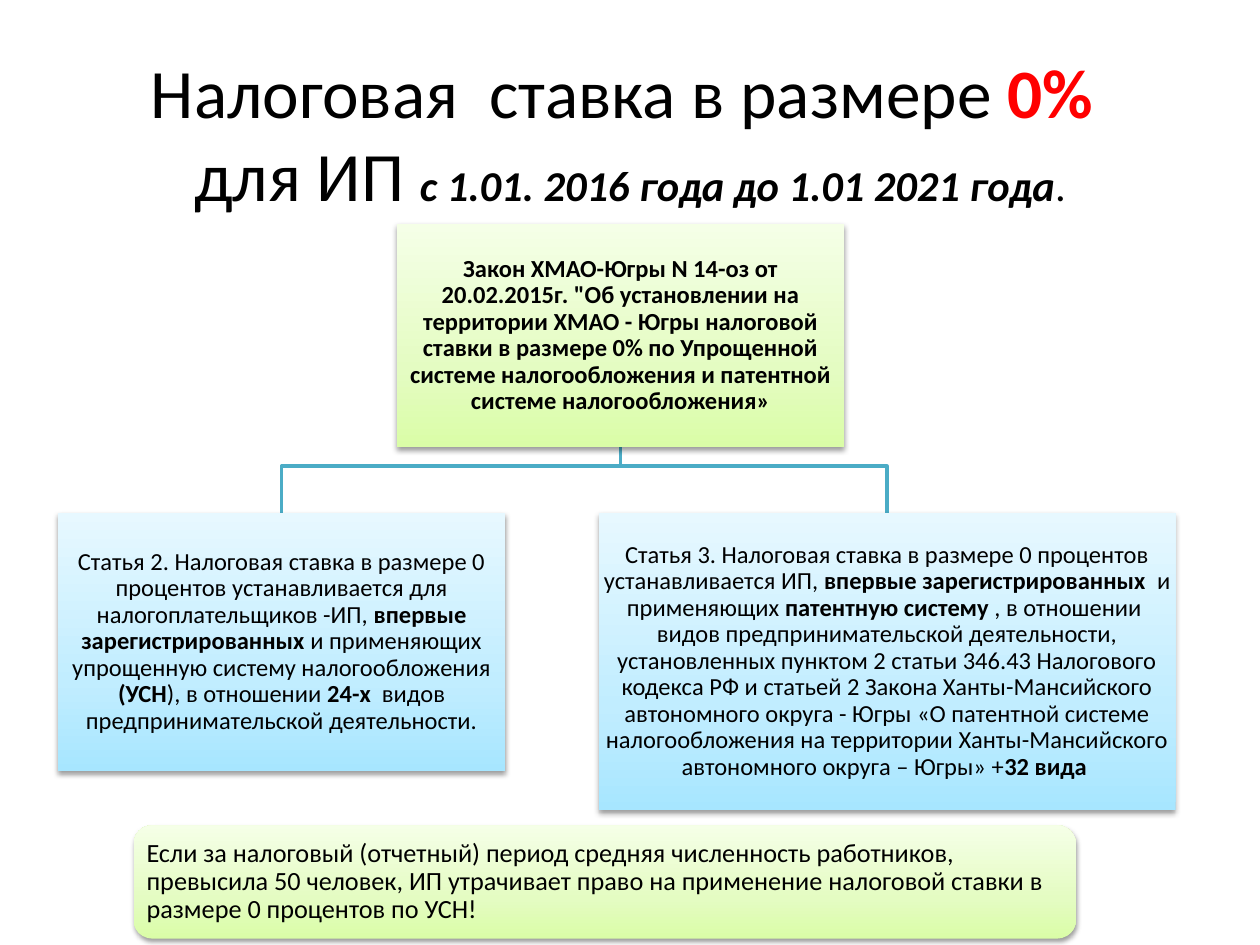
import pptx
import pptx.util
import pptx.oxml
import pptx.oxml.ns
import pptx.dml.color
import pptx.enum.shapes
import pptx.enum.text

FONT = "Calibri"
COLORS = {"text": "000000", "accent": "FF0000", "link": "4BACC6", "shadow": "000000"}
GRADIENTS = {
    "green": [(0, "DAFDA7"), (35, "E4FCC2"), (100, "F5FFE7")],
    "blue": [(0, "A7E6FF"), (35, "C1EDFF"), (100, "E7F8FF")],
}
TITLE_LINES = [
    [("Налоговая  ставка в размере ", 39.6, "", "text"), ("0% ", 39.6, "b", "accent")],
    [
        ("для ИП ", 39.6, "", "text"),
        ("с 1.01. 2016 года до 1.01 2021 года", 24.3, "bi", "text"),
        (".", 24.3, "", "text"),
    ],
]
LAW = [
    ('Закон ХМАО-Югры N 14-оз от 20.02.2015г. "Об установлении на территории '
     "ХМАО - Югры налоговой ставки в размере 0% по Упрощенной системе "
     "налогообложения и патентной системе налогообложения»", "b"),
]
ARTICLE_2 = [
    ("Статья 2. Налоговая ставка в размере 0 процентов устанавливается для "
     "налогоплательщиков -ИП, ", ""),
    ("впервые зарегистрированных ", "b"),
    ("и применяющих упрощенную систему налогообложения ", ""),
    ("(УСН", "b"),
    ("), в отношении ", ""),
    ("24-х", "b"),
    ("  видов предпринимательской деятельности.", ""),
]
ARTICLE_3 = [
    ("Статья 3. Налоговая ставка в размере 0 процентов устанавливается ИП, ", ""),
    ("впервые зарегистрированных  ", "b"),
    ("и применяющих ", ""),
    ("патентную систему ", "b"),
    (", в отношении  видов предпринимательской деятельности, установленных "
     "пунктом 2 статьи 346.43 Налогового кодекса РФ и статьей 2 Закона "
     "Ханты-Мансийского автономного округа - Югры «О патентной системе "
     "налогообложения на территории Ханты-Мансийского автономного округа – "
     "Югры» +", ""),
    ("32 вида ", "b"),
]
NOTE = [
    ("Если за налоговый (отчетный) период средняя численность работников, "
     "превысила 50 человек, ИП утрачивает право на применение налоговой ставки "
     "в размере 0 процентов по УСН!", ""),
]
ROOT_BOX = (3.15, 1.78, 3.55, 1.77)
CHILD_TOP = 4.07
CHILDREN = [
    ((0.46, CHILD_TOP, 3.55, 2.05), ARTICLE_2),
    ((4.75, CHILD_TOP, 4.58, 2.36), ARTICLE_3),
]
NOTE_BOX = (1.06, 6.55, 7.48, 0.9)
ELBOW_Y = 3.7


def inches(values):
    return [pptx.util.Inches(value) for value in values]


def rgb(name):
    return pptx.dml.color.RGBColor.from_string(COLORS[name])


def set_margins(frame, left, top, right, bottom):
    frame.margin_left, frame.margin_top, frame.margin_right, frame.margin_bottom = inches(
        (left, top, right, bottom))


def add_run(paragraph, text, style):
    run = paragraph.add_run()
    run.text = text
    run.font.bold = "b" in style
    run.font.italic = "i" in style
    return run


def drawing_element(xml):
    return pptx.oxml.parse_xml(xml.replace(">", " " + pptx.oxml.ns.nsdecls("a") + ">", 1))


def add_gradient(shape, stops):
    stop_xml = "".join(
        f'<a:gs pos="{position * 1000}"><a:srgbClr val="{color}"/></a:gs>'
        for position, color in stops)
    gradient = drawing_element(
        f'<a:gradFill><a:gsLst>{stop_xml}</a:gsLst>'
        '<a:lin ang="16200000" scaled="0"/></a:gradFill>')
    shape._element.spPr.find(pptx.oxml.ns.qn("a:prstGeom")).addnext(gradient)


def add_shadow(shape):
    shape.shadow.inherit = False
    blur, distance = pptx.util.Pt(3.1), pptx.util.Pt(1.6)
    shadow = drawing_element(
        f'<a:outerShdw blurRad="{blur}" dist="{distance}" dir="5400000" rotWithShape="0">'
        f'<a:srgbClr val="{COLORS["shadow"]}"><a:alpha val="38000"/></a:srgbClr></a:outerShdw>')
    shape._element.spPr.find(pptx.oxml.ns.qn("a:effectLst")).append(shadow)


def add_card(slide, kind, box, gradient, runs, size, margin, alignment):
    shape = slide.shapes.add_shape(kind, *inches(box))
    shape.line.fill.background()
    add_gradient(shape, GRADIENTS[gradient])
    add_shadow(shape)
    frame = shape.text_frame
    frame.word_wrap = True
    frame.vertical_anchor = pptx.enum.text.MSO_ANCHOR.MIDDLE
    set_margins(frame, *[margin] * 4)
    paragraph = frame.paragraphs[0]
    paragraph.alignment = alignment
    paragraph.line_spacing = 0.9
    paragraph.font.name = FONT
    paragraph.font.size = pptx.util.Pt(size)
    paragraph.font.color.rgb = rgb("text")
    for text, style in runs:
        add_run(paragraph, text, style)


def add_branch(slide, box):
    start_x = ROOT_BOX[0] + ROOT_BOX[2] / 2
    start_y = ROOT_BOX[1] + ROOT_BOX[3]
    end_x = box[0] + box[2] / 2
    corners = [(start_x, start_y), (start_x, ELBOW_Y), (end_x, ELBOW_Y), (end_x, CHILD_TOP)]
    start, *rest = [inches(corner) for corner in corners]
    builder = slide.shapes.build_freeform(*start)
    builder.add_line_segments(rest, close=False)
    branch = builder.convert_to_shape()
    branch.fill.background()
    branch.line.color.rgb = rgb("link")
    branch.line.width = pptx.util.Pt(2)
    branch.shadow.inherit = False


def fill_title(title):
    title.left, title.top, title.width, title.height = inches((0.5, 0.3, 9, 1.25))
    frame = title.text_frame
    frame.word_wrap = True
    frame.auto_size = pptx.enum.text.MSO_AUTO_SIZE.NONE
    frame.vertical_anchor = pptx.enum.text.MSO_ANCHOR.TOP
    set_margins(frame, 0.1, 0.09, 0.1, 0)
    paragraph = frame.paragraphs[0]
    paragraph.alignment = pptx.enum.text.PP_ALIGN.CENTER
    paragraph.font.name = FONT
    for index, line in enumerate(TITLE_LINES):
        if index:
            paragraph.add_line_break()
        for text, size, style, color in line:
            run = add_run(paragraph, text, style)
            run.font.size = pptx.util.Pt(size)
            run.font.color.rgb = rgb(color)


def main():
    presentation = pptx.Presentation()
    presentation.slide_width, presentation.slide_height = inches((10, 7.5))
    slide = presentation.slides.add_slide(presentation.slide_layouts[5])
    fill_title(slide.shapes.title)
    rectangle = pptx.enum.shapes.MSO_SHAPE.RECTANGLE
    rounded = pptx.enum.shapes.MSO_SHAPE.ROUNDED_RECTANGLE
    center = pptx.enum.text.PP_ALIGN.CENTER
    for box, runs in CHILDREN:
        add_branch(slide, box)
    add_card(slide, rectangle, ROOT_BOX, "green", LAW, 14, 0.01, center)
    for box, runs in CHILDREN:
        add_card(slide, rectangle, box, "blue", runs, 14, 0.01, center)
    add_card(slide, rounded, NOTE_BOX, "green", NOTE, 15, 0.06, pptx.enum.text.PP_ALIGN.LEFT)
    presentation.save("out.pptx")


if __name__ == "__main__":
    main()
